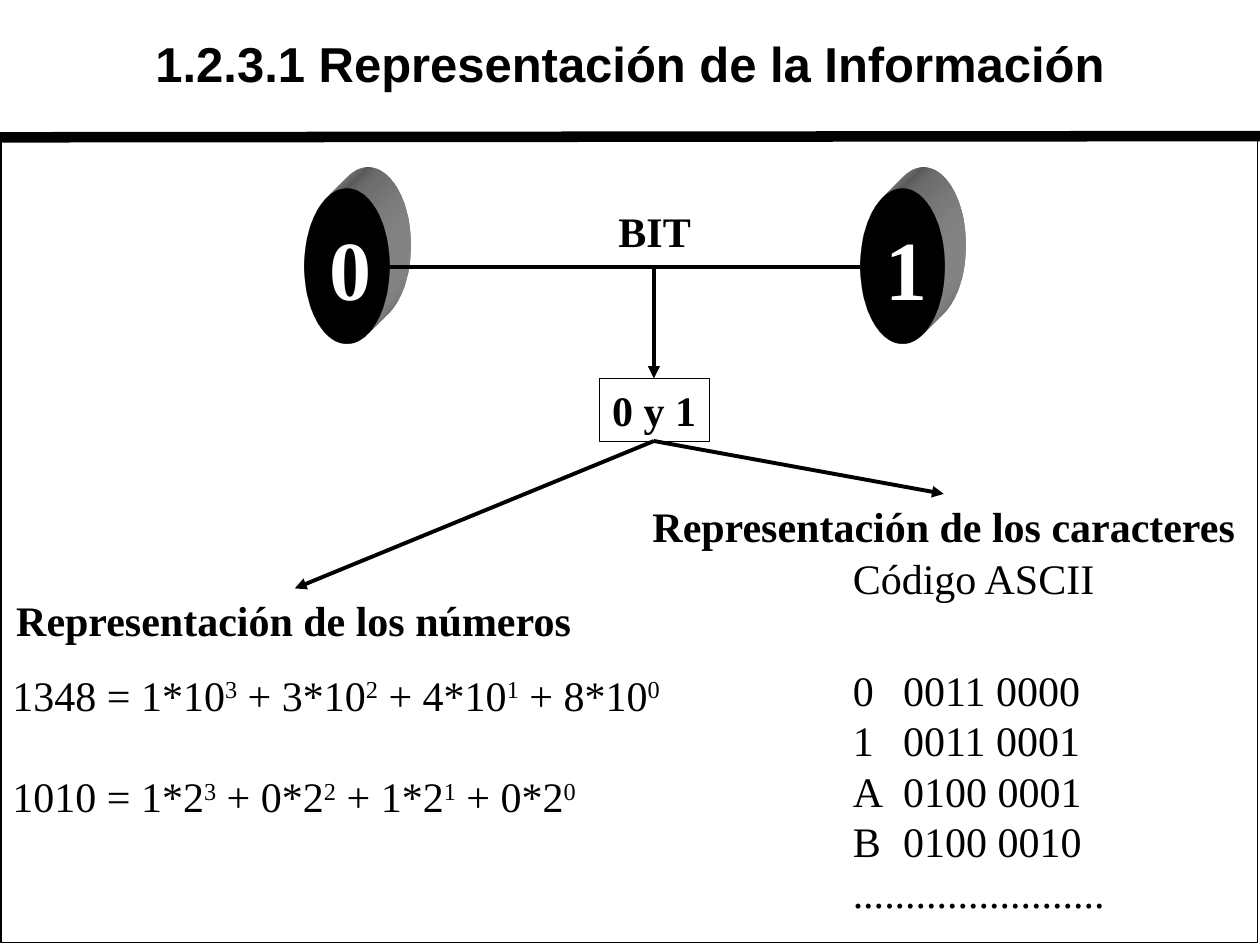
from lxml import etree
from pptx import Presentation
from pptx.dml.color import RGBColor
from pptx.enum.shapes import MSO_CONNECTOR, MSO_SHAPE
from pptx.enum.text import MSO_ANCHOR, MSO_AUTO_SIZE, PP_ALIGN
from pptx.oxml.ns import qn
from pptx.util import Inches, Pt

BLACK, WHITE, DISC_SIDE = "000000", "FFFFFF", "969696"
SERIF = "Times New Roman"
BIT_CENTER = 5.19
DISC_TOP, DISC_WIDTH, DISC_HEIGHT, DISC_DEPTH = 1.5, 0.67, 1.23, 0.47
DISC_MIDDLE = 2.12
ZERO_LEFT, ONE_LEFT = 2.42, 6.83

HEADINGS = [
    ("Representación de los números", (0.03, 4.67, 4.62, 0.5)),
    ("Representación de los caracteres", (5.08, 3.92, 4.84, 0.5)),
]
ASCII_CODES = [("0", "0011 0000"), ("1", "0011 0001"),
               ("A", "0100 0001"), ("B", "0100 0010")]
EXPANSIONS = [("1348", 10), ("1010", 2)]


def color(hex_value):
    return RGBColor.from_string(hex_value)


def inches(*values):
    return [Inches(value) for value in values]


def add_run(paragraph, text, size=24, bold=False, ink=BLACK, font=SERIF):
    run = paragraph.add_run()
    run.text = text
    formats = {"name": font, "size": Pt(size), "bold": bold}
    for attribute, value in formats.items():
        setattr(run.font, attribute, value)
    run.font.color.rgb = color(ink)
    return run


def set_frame(frame):
    formats = {"word_wrap": False, "auto_size": MSO_AUTO_SIZE.SHAPE_TO_FIT_TEXT,
               "vertical_anchor": MSO_ANCHOR.MIDDLE}
    for attribute, value in formats.items():
        setattr(frame, attribute, value)
    return frame


def add_text_frame(slide, box):
    return set_frame(slide.shapes.add_textbox(*inches(*box)).text_frame)


def add_heading(slide, text, box):
    add_run(add_text_frame(slide, box).paragraphs[0], text, bold=True)


def next_paragraph(frame, first):
    return frame.paragraphs[0] if first else frame.add_paragraph()


def add_frame_box(slide, box, line_width):
    rectangle = slide.shapes.add_shape(MSO_SHAPE.RECTANGLE, *inches(*box))
    rectangle.shadow.inherit = False
    rectangle.fill.background()
    rectangle.line.color.rgb = color(BLACK)
    rectangle.line.width = Pt(line_width)
    return rectangle


def add_line(slide, start, end, width=2.25, bent=False, arrow=True):
    kind = MSO_CONNECTOR.ELBOW if bent else MSO_CONNECTOR.STRAIGHT
    line = slide.shapes.add_connector(kind, *inches(*start, *end))
    line.line.color.rgb = color(BLACK)
    line.line.width = Pt(width)
    properties = line._element.spPr
    if bent:
        properties.find(qn("a:prstGeom")).set("prst", "bentConnector2")
    if arrow:
        etree.SubElement(line.line._get_or_add_ln(), qn("a:tailEnd"), type="triangle")
    etree.SubElement(properties, qn("a:effectLst"))


def extrude(shape, depth, side_color):
    """Give the shape a solid side that runs up and to the right."""
    properties = shape._element.spPr
    scene = etree.SubElement(properties, qn("a:scene3d"))
    etree.SubElement(scene, qn("a:camera"), prst="legacyObliqueTopRight")
    etree.SubElement(scene, qn("a:lightRig"), rig="legacyFlat3", dir="b")
    solid = etree.SubElement(properties, qn("a:sp3d"), extrusionH=str(Inches(depth)),
                             prstMaterial="legacyMatte")
    side = etree.SubElement(solid, qn("a:extrusionClr"))
    etree.SubElement(side, qn("a:srgbClr"), val=side_color)


def add_disc(slide, digit, left):
    disc = slide.shapes.add_shape(
        MSO_SHAPE.OVAL, *inches(left, DISC_TOP, DISC_WIDTH, DISC_HEIGHT))
    disc.shadow.inherit = False
    disc.fill.solid()
    disc.fill.fore_color.rgb = color(BLACK)
    disc.line.fill.background()
    extrude(disc, DISC_DEPTH, DISC_SIDE)
    paragraph = set_frame(disc.text_frame).paragraphs[0]
    paragraph.alignment = PP_ALIGN.CENTER
    add_run(paragraph, digit, size=48, bold=True, ink=WHITE)


def add_expansions(slide):
    """Each number as a sum of its digits times powers of the base."""
    frame = add_text_frame(slide, (0, 5.33, 5.4, 1.17))
    for index, (number, base) in enumerate(EXPANSIONS):
        paragraph = next_paragraph(frame, index == 0)
        paragraph.space_before = Pt(29 * index)
        for place, digit in enumerate(number):
            lead = " + " if place else f"{number} = "
            add_run(paragraph, f"{lead}{digit}*{base}")
            exponent = add_run(paragraph, str(len(number) - 1 - place))
            exponent._r.get_or_add_rPr().set("baseline", "30000")


def add_ascii_list(slide):
    frame = add_text_frame(slide, (6.67, 4.54, 2.2, 2.58))
    codes = ["\t".join(pair) for pair in ASCII_CODES]
    for index, text in enumerate(["Código ASCII", *codes, "." * 24]):
        paragraph = next_paragraph(frame, index == 0)
        paragraph.alignment = PP_ALIGN.JUSTIFY
        paragraph.space_before = Pt(35 if index == 1 else 0)
        tabs = etree.SubElement(paragraph._p.get_or_add_pPr(), qn("a:tabLst"))
        etree.SubElement(tabs, qn("a:tab"), pos=str(Inches(0.4)), algn="l")
        add_run(paragraph, text)


def add_title(slide, text):
    title = slide.shapes.title
    place = dict(zip(("left", "top", "width", "height"), inches(0.25, 0, 9.5, 1)))
    for attribute, value in place.items():
        setattr(title, attribute, value)
    title.text_frame.vertical_anchor = MSO_ANCHOR.MIDDLE
    paragraph = title.text_frame.paragraphs[0]
    paragraph.alignment = PP_ALIGN.CENTER
    add_run(paragraph, text, size=28, bold=True, font="Arial")


def main():
    presentation = Presentation()
    presentation.slide_width, presentation.slide_height = inches(10, 7.5)
    slide = presentation.slides.add_slide(presentation.slide_layouts[5])

    add_line(slide, (0, 1.09), (10.02, 1.08), width=6, arrow=False)
    add_frame_box(slide, (0.01, 1.08, 9.97, 6.4), 1)
    add_title(slide, "1.2.3.1 Representación de la Información")

    add_disc(slide, "0", ZERO_LEFT)
    add_disc(slide, "1", ONE_LEFT)
    bit_values = add_frame_box(slide, (4.76, 3, 0.87, 0.5), 0.25)
    paragraph = set_frame(bit_values.text_frame).paragraphs[0]
    paragraph.alignment = PP_ALIGN.LEFT
    add_run(paragraph, "0 y 1", bold=True)

    for text, box in HEADINGS:
        add_heading(slide, text, box)
    for disc_edge in (ZERO_LEFT + DISC_WIDTH, ONE_LEFT):
        add_line(slide, (disc_edge, DISC_MIDDLE), (BIT_CENTER, 3), bent=True)
    for target in ((2.34, 4.67), (7.49, 3.92)):
        add_line(slide, (BIT_CENTER, 3.5), target)

    add_ascii_list(slide)
    add_expansions(slide)
    add_heading(slide, "BIT", (4.81, 1.58, 0.78, 0.5))
    presentation.save("out.pptx")


if __name__ == "__main__":
    main()
